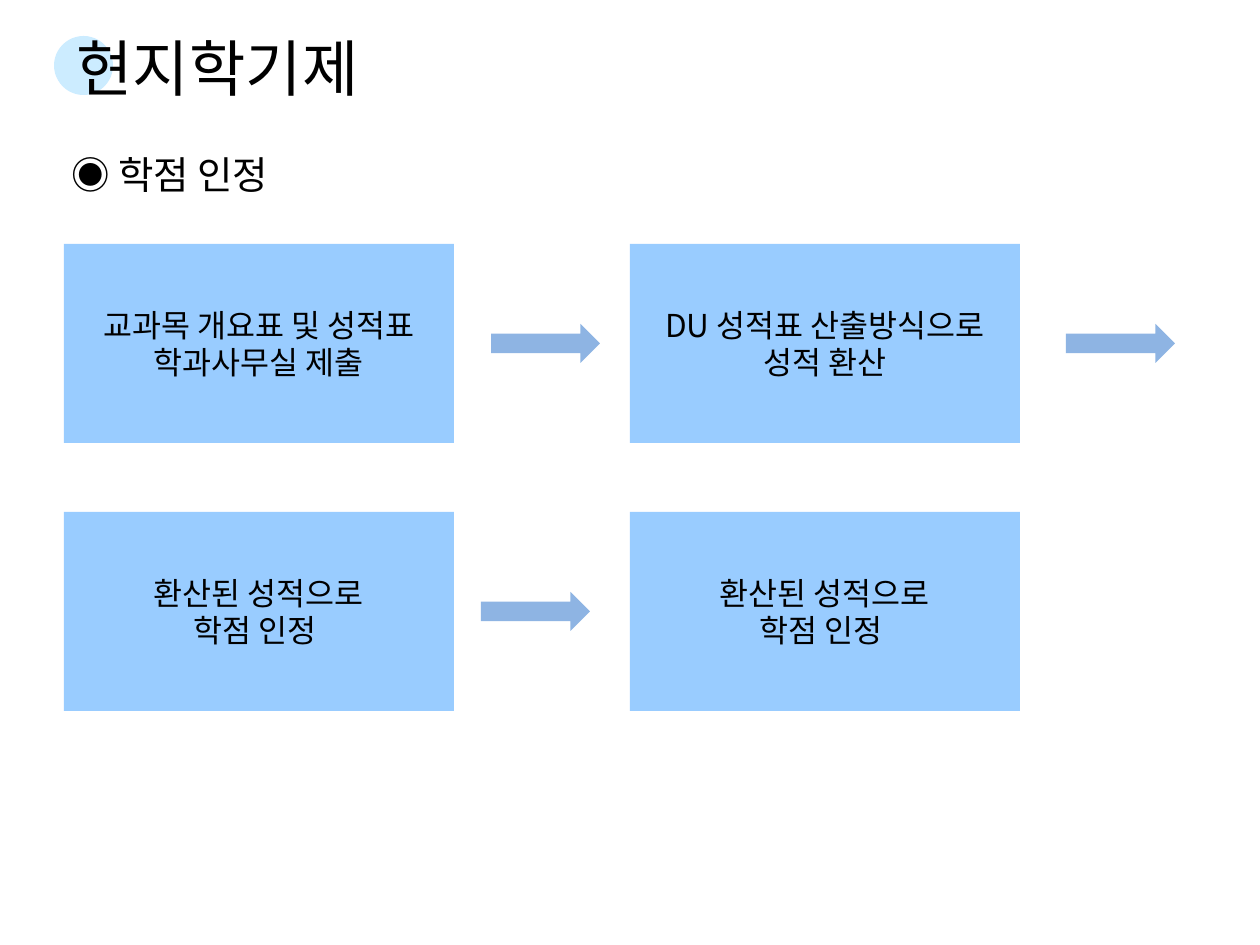
from pptx import Presentation
from pptx.dml.color import RGBColor
from pptx.enum.shapes import MSO_SHAPE as Shape
from pptx.enum.text import MSO_ANCHOR as Anchor, MSO_AUTO_SIZE as AutoSize, PP_ALIGN as Align
from pptx.oxml.ns import qn
from pptx.util import Pt

PX = 914400 // 126
BLACK = RGBColor(0x00, 0x00, 0x00)
BOX_BLUE = RGBColor(0x99, 0xCC, 0xFF)
ARROW_BLUE = RGBColor(0x8E, 0xB4, 0xE3)
PALE_BLUE = RGBColor(0xCC, 0xEC, 0xFF)
KOREAN = "Noto Sans CJK KR"
COLUMNS = (64, 630)
ROWS = (244, 512)
BOX_WIDTH, BOX_HEIGHT = 390, 199
ARROW_WIDTH, ARROW_HEIGHT = 109, 39
STEPS = (
    (("교과목 개요표 및 성적표 학과사무실 제출",), ("DU 성적표 산출방식으로 성적 환산",)),
    (("환산된 성적으로", "학점 인정 "), ("환산된 성적으로", "학점 인정 ")),
)
ARROWS = ((491, 1066), (481,))


class SlideBuilder:
    """Draws the elements of one slide in a shared style."""

    def __init__(self, presentation):
        self.slide = presentation.slides.add_slide(presentation.slide_layouts[5])

    def set_text(self, shape, lines, size, font=KOREAN, align=Align.LEFT, anchor=Anchor.TOP):
        frame = shape.text_frame
        frame.text = "\n".join(lines)
        frame.word_wrap = True
        frame.auto_size = AutoSize.NONE
        frame.vertical_anchor = anchor
        for paragraph in frame.paragraphs:
            paragraph.alignment = align
            paragraph.font.size = Pt(size)
            paragraph.font.name = font
            paragraph.font.color.rgb = BLACK
            properties = paragraph.font._element
            east_asian = properties.makeelement(qn("a:ea"), {"typeface": KOREAN})
            properties.find(qn("a:latin")).addnext(east_asian)

    def shape(self, kind, left, top, width, height, color):
        shape = self.slide.shapes.add_shape(kind, *(n * PX for n in (left, top, width, height)))
        shape.shadow.inherit = False
        shape.fill.solid()
        shape.fill.fore_color.rgb = color
        shape.line.fill.background()
        return shape

    def title(self, text, left, top, width, height):
        title = self.slide.shapes.title
        title.left, title.top, title.width, title.height = (n * PX for n in (left, top, width, height))
        self.set_text(title, [text], 35, anchor=Anchor.BOTTOM)
        title.text_frame.margin_bottom = 13 * PX

    def accent(self, left, top, size):
        circle = self.shape(Shape.OVAL, left, top, size, size, PALE_BLUE)
        self.slide.shapes.title._element.addprevious(circle._element)

    def heading(self, text, left, top, width, height):
        box = self.slide.shapes.add_textbox(*(n * PX for n in (left, top, width, height)))
        self.set_text(box, [text], 22, "Arial")

    def step(self, lines, left, top):
        box = self.shape(Shape.RECTANGLE, left, top, BOX_WIDTH, BOX_HEIGHT, BOX_BLUE)
        self.set_text(box, lines, 18, align=Align.CENTER, anchor=Anchor.MIDDLE)

    def arrow(self, left, row_top):
        top = row_top + (BOX_HEIGHT - ARROW_HEIGHT) // 2
        self.shape(Shape.RIGHT_ARROW, left, top, ARROW_WIDTH, ARROW_HEIGHT, ARROW_BLUE)


def main():
    presentation = Presentation()
    presentation.slide_width, presentation.slide_height = 1260 * PX, 945 * PX
    builder = SlideBuilder(presentation)
    builder.title("현지학기제", 64, 49, 397, 68)
    builder.accent(54, 36, 59)
    builder.heading("◉ 학점 인정", 59, 145, 294, 69)
    for top, steps, arrows in zip(ROWS, STEPS, ARROWS):
        for left, lines in zip(COLUMNS, steps):
            builder.step(lines, left, top)
        for left in arrows:
            builder.arrow(left, top)
    presentation.save("out.pptx")


if __name__ == "__main__":
    main()
